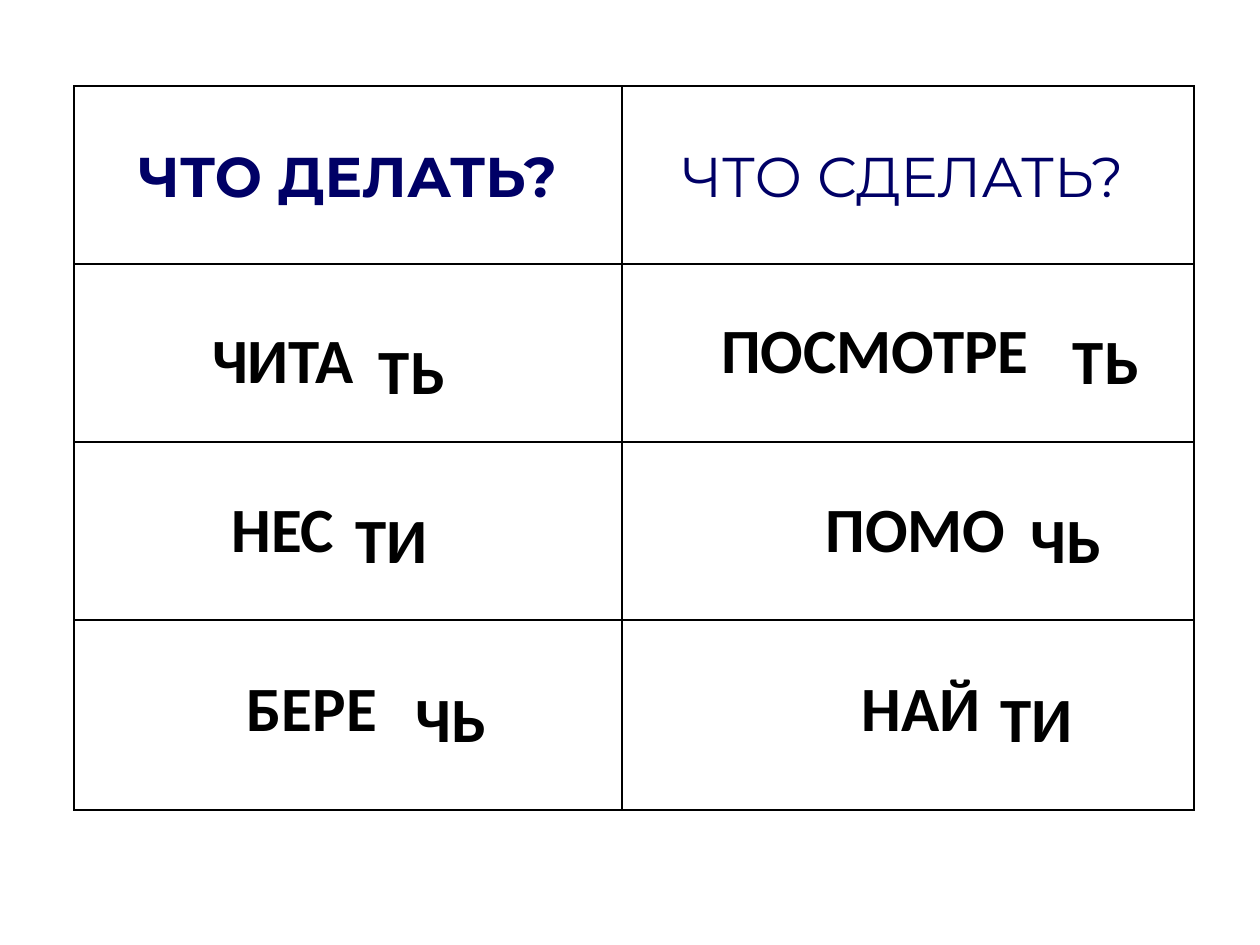
from lxml import etree
from pptx import Presentation
from pptx.dml.color import RGBColor
from pptx.enum.text import MSO_AUTO_SIZE, PP_ALIGN
from pptx.oxml.ns import qn
from pptx.util import Emu, Pt

PX = 914400 / 126
WHITE = RGBColor(0xFF, 0xFF, 0xFF)
BLACK = RGBColor(0x00, 0x00, 0x00)
NAVY = RGBColor(0x00, 0x00, 0x66)
BLUE = RGBColor(0x05, 0x46, 0x97)
CENTER = PP_ALIGN.CENTER
GROW = MSO_AUTO_SIZE.SHAPE_TO_FIT_TEXT
BLANK_LAYOUT = 6

GRID_LEFT, GRID_TOP = 74, 86
COLUMN_WIDTHS = (548, 572)
ROW_HEIGHTS = (178, 178, 178, 190)

# text, left, width, bold
HEADINGS = (
    ("ЧТО ДЕЛАТЬ?", 94, 507, True),
    ("ЧТО СДЕЛАТЬ?", 640, 525, False),
)
# top, stem, stem left, stem width, ending, ending left
VERBS = (
    (314, "ЧИТА", 174, 218, "ТЬ", 353),
    (304, "ПОСМОТРЕ", 679, 392, "ТЬ", 1047),
    (483, "НЕС", 203, 160, "ТИ", 333),
    (483, "ПОМО", 804, 223, "ЧЬ", 1007),
    (662, "БЕРЕ", 213, 198, "ЧЬ", 392),
    (662, "НАЙ", 840, 163, "ТИ", 978),
)


def px(length):
    return Emu(round(length * PX))


def add_line(parent, tag, color):
    """Append a one-point solid line element to a properties element."""
    line = etree.SubElement(parent, qn(tag), w=str(Pt(1)))
    fill = etree.SubElement(line, qn("a:solidFill"))
    etree.SubElement(fill, qn("a:srgbClr"), val=str(color))
    return line


class VerbSlide:
    def __init__(self, presentation):
        layout = presentation.slide_layouts[BLANK_LAYOUT]
        self.slide = presentation.slides.add_slide(layout)
        background = self.slide.background.fill
        background.solid()
        background.fore_color.rgb = WHITE

    def grid(self, left, top, widths, heights):
        frame = self.slide.shapes.add_table(
            len(heights), len(widths), px(left), px(top),
            px(sum(widths)), px(sum(heights)))
        table = frame.table
        table.first_row = table.horz_banding = False
        for column, width in zip(table.columns, widths):
            column.width = px(width)
        for row, height in zip(table.rows, heights):
            row.height = px(height)
        for cell in table.iter_cells():
            properties = cell._tc.get_or_add_tcPr()
            for side in ("a:lnL", "a:lnR", "a:lnT", "a:lnB"):
                add_line(properties, side, BLACK)
            cell.fill.background()

    def text(self, words, left, top, width, height, font, size, color,
             bold=True, wrap=True):
        box = self.slide.shapes.add_textbox(
            px(left), px(top), px(width), px(height))
        frame = box.text_frame
        frame.word_wrap = wrap
        frame.auto_size = GROW
        frame.text = words
        paragraph = frame.paragraphs[0]
        paragraph.alignment = CENTER
        run = paragraph.runs[0]
        run.font.name = font
        run.font.size = Pt(size)
        run.font.bold = bold
        run.font.color.rgb = color
        return paragraph

    def heading(self, words, left, width, bold):
        self.text(words, left, 135, width, 81, "Montserrat", 32, NAVY, bold)

    def word_part(self, words, left, top, width, height, wrap):
        """Add outlined bold text for one part of a verb."""
        paragraph = self.text(words, left, top, width, height,
                              "Calibri", 36, BLACK, wrap=wrap)
        properties = paragraph.runs[0].font._element
        properties.insert(0, add_line(properties, "a:ln", BLUE))
        return paragraph

    def stem(self, words, left, top, width):
        self.word_part(words, left, top, width, 89, wrap=False)

    def ending(self, words, left, top):
        paragraph = self.word_part(words, left, top, 118, 94, wrap=True)
        paragraph.line_spacing = 1.15


def main():
    presentation = Presentation()
    presentation.slide_width = px(1260)
    presentation.slide_height = px(945)
    page = VerbSlide(presentation)
    page.grid(GRID_LEFT, GRID_TOP, COLUMN_WIDTHS, ROW_HEIGHTS)
    for heading in HEADINGS:
        page.heading(*heading)
    for top, stem, stem_left, stem_width, _, _ in VERBS:
        page.stem(stem, stem_left, top, stem_width)
    for top, _, _, _, ending, ending_left in VERBS:
        page.ending(ending, ending_left, top)
    presentation.save("out.pptx")


if __name__ == "__main__":
    main()
